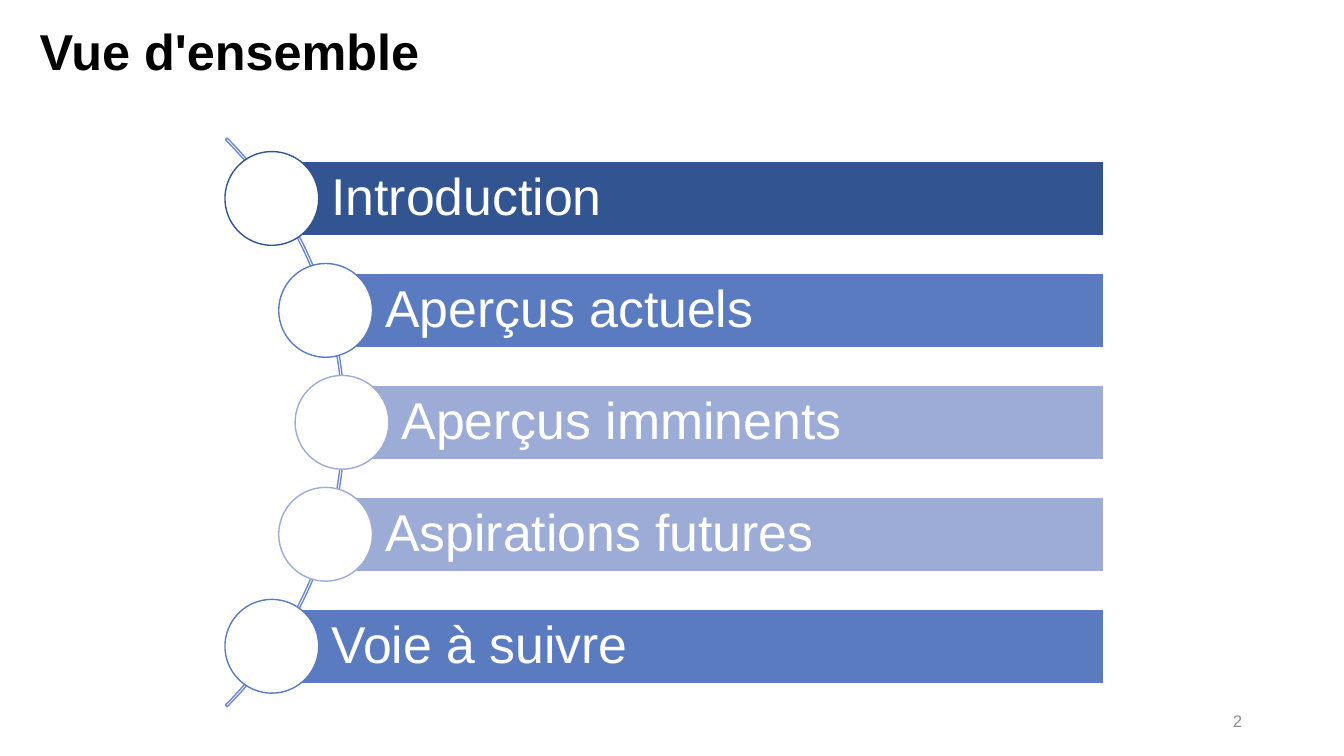
from pptx import Presentation, util as u
from pptx.dml.color import RGBColor
from pptx.enum import shapes, text

NAVY = RGBColor(0x32, 0x54, 0x91)
BLUE = RGBColor(0x5B, 0x7B, 0xC0)
PALE = RGBColor(0x9D, 0xAC, 0xD6)
EDGE = RGBColor(0x6D, 0x89, 0xCB)
GREY = RGBColor(0x8C, 0x8C, 0x8C)
WHITE = RGBColor(0xFF, 0xFF, 0xFF)
BLACK = RGBColor(0, 0, 0)
KIND = shapes.MSO_SHAPE

deck = Presentation()
deck.slide_width, deck.slide_height = u.Inches(13.33), u.Inches(7.5)
COL, ROW = deck.slide_width / 100, deck.slide_height / 100
page = deck.slides.add_slide(deck.slide_layouts[5])


def draw(kind, box, fill, line):
    x, y, w, h = box
    item = page.shapes.add_shape(
        kind, int(x * COL), int(y * ROW), int(w * COL), int(h * ROW))
    item.shadow.inherit = False
    if fill is None:
        item.fill.background()
    else:
        item.fill.solid()
        item.fill.fore_color.rgb = fill
    item.line.color.rgb = line
    item.line.width = u.Pt(1)
    return item


def write(item, words, size, color, bold=False, align=text.PP_ALIGN.LEFT, lead=0.9):
    frame = item.text_frame
    frame.text = words
    para = frame.paragraphs[0]
    para.font.color.rgb = color
    looks = [
        (frame, {"word_wrap": True, "auto_size": text.MSO_AUTO_SIZE.NONE,
                 "vertical_anchor": text.MSO_ANCHOR.MIDDLE}),
        (para, {"alignment": align, "line_spacing": lead}),
        (para.font, {"name": "Arial", "size": u.Pt(size), "bold": bold}),
    ]
    for part, look in looks:
        for key, val in look.items():
            setattr(part, key, val)


title = page.shapes.title
spot = {"left": 2.2 * COL, "top": 2.13 * ROW, "width": 48.69 * COL, "height": 10 * ROW}
for key, val in spot.items():
    setattr(title, key, int(val))
write(title, "Vue d'ensemble", 36, BLACK, bold=True)

MID, STEP, RIGHT = 55.87, 14.81, 82.14
BAR, DISC = 9.87, 12.4
WIDE = DISC * ROW / COL
ARC = 106.4
arc = draw(KIND.BLOCK_ARC, (-34.2, MID - ARC / 2, ARC * ROW / COL, ARC), None, EDGE)
for i, val in enumerate((189, 27, 0.003)):
    arc.adjustments[i] = val

topics = [
    ("Introduction", 20.23, NAVY),
    ("Aperçus actuels", 24.23, BLUE),
    ("Aperçus imminents", 25.45, PALE),
    ("Aspirations futures", 24.23, PALE),
    ("Voie à suivre", 20.23, BLUE),
]
for i, (words, left, color) in enumerate(topics):
    mid = MID + (i - 2) * STEP
    bar = draw(KIND.RECTANGLE, (left, mid - BAR / 2, RIGHT - left, BAR), color, WHITE)
    write(bar, words, 37, WHITE)
    bar.text_frame.margin_left = int(4.43 * COL)
    draw(KIND.OVAL, (left - WIDE / 2, mid - DISC / 2, WIDE, DISC), WHITE, color)

number = page.shapes.add_textbox(
    int(70.67 * COL), int(92.67 * ROW), int(22.5 * COL), int(5.33 * ROW))
write(number, "2", 12, GREY, align=text.PP_ALIGN.RIGHT, lead=1.0)

deck.save("out.pptx")
